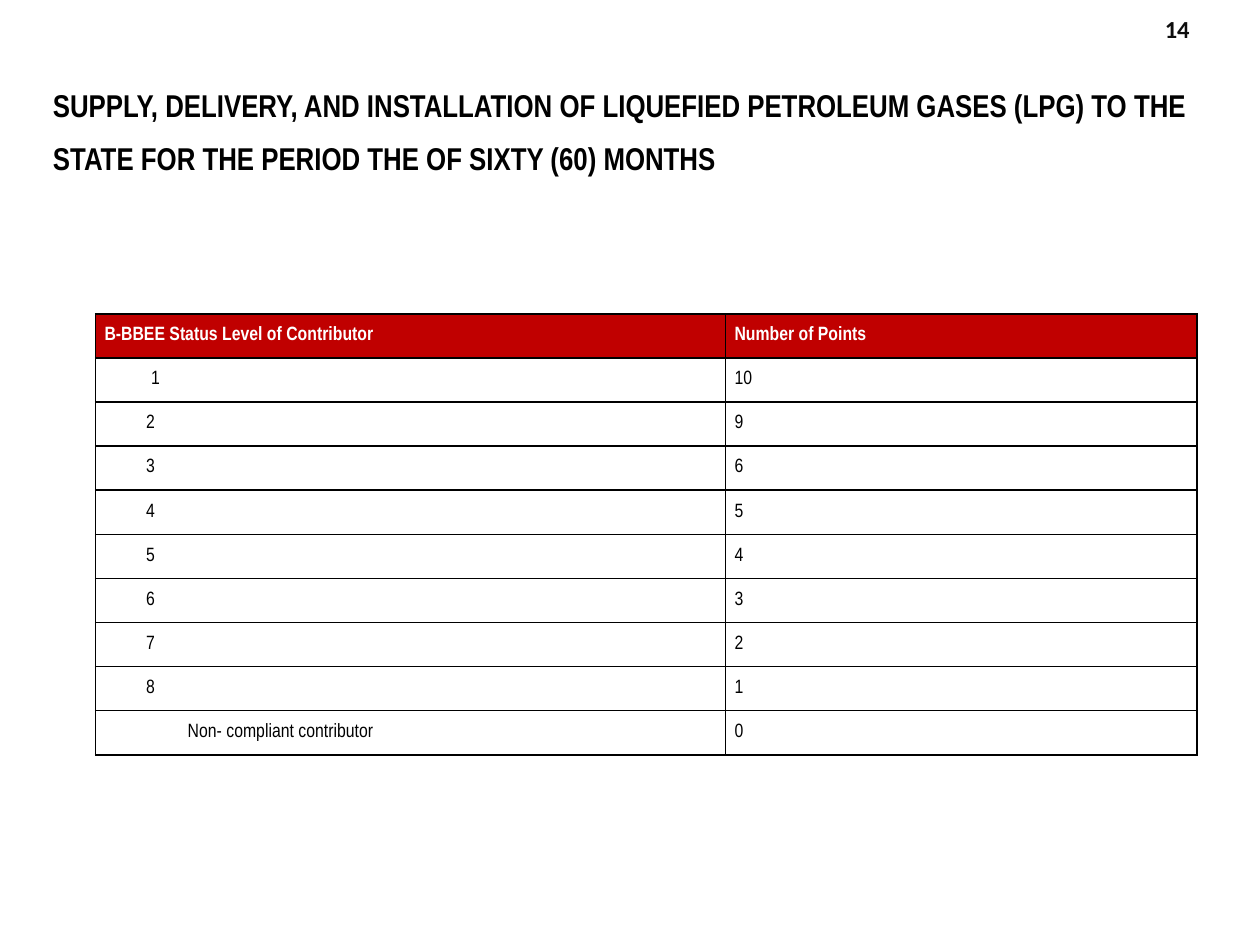
from dataclasses import dataclass

from lxml import etree
from pptx import Presentation
from pptx.dml.color import RGBColor
from pptx.enum.text import MSO_ANCHOR, PP_ALIGN
from pptx.oxml.ns import qn
from pptx.util import Inches, Pt


@dataclass(frozen=True)
class Theme:
    black: RGBColor = RGBColor(0x00, 0x00, 0x00)
    white: RGBColor = RGBColor(0xFF, 0xFF, 0xFF)
    number_ink: RGBColor = RGBColor(0x0D, 0x0D, 0x0D)
    header_fill: RGBColor = RGBColor(0xC0, 0x00, 0x00)
    text_face: str = "Arial Narrow"
    number_face: str = "Calibri"
    title_size: int = 18
    number_size: int = 14
    table_size: int = 11


THEME = Theme()
TITLE = ("SUPPLY, DELIVERY, AND INSTALLATION OF LIQUEFIED PETROLEUM GASES (LPG) "
         "TO THE STATE FOR THE PERIOD THE OF SIXTY (60) MONTHS")
HEADINGS = ("B-BBEE Status Level of Contributor", "Number of Points")
LEVELS = [str(level) for level in range(1, 9)] + ["Non- compliant contributor"]
POINTS = (10, 9, 6, 5, 4, 3, 2, 1, 0)

# Table grid, in inches
COLUMN_WIDTHS = (5, 3.74)
ROW_HEIGHT = 0.35
HANGING = -0.01
LEVEL_INDENTS = [0.38] + [0.34] * 7 + [0.67]


def style_font(paragraph, face, size, color, bold):
    font = paragraph.font
    font.name, font.size, font.bold = face, Pt(size), bold
    font.color.rgb = color


def place(shape, left, top, width, height):
    shape.left, shape.top = Inches(left), Inches(top)
    shape.width, shape.height = Inches(width), Inches(height)


def add_title(slide):
    title = slide.shapes.title
    place(title, 0.32, 0.68, 9.34, 1.03)
    frame = title.text_frame
    frame.text = TITLE
    frame.word_wrap = True
    frame.vertical_anchor = MSO_ANCHOR.MIDDLE
    frame.margin_bottom = Inches(0.47)  # lifts the text by half a line
    heading = frame.paragraphs[0]
    heading.alignment = PP_ALIGN.LEFT
    heading.line_spacing = Pt(30)
    heading.space_before = Pt(0)
    style_font(heading, THEME.text_face, THEME.title_size, THEME.black, True)


def add_page_number(slide, number):
    box = slide.shapes.add_textbox(Inches(9.1), 0, Inches(0.44), Inches(0.45))
    frame = box.text_frame
    frame.word_wrap = True
    frame.vertical_anchor = MSO_ANCHOR.MIDDLE
    frame.text = number
    paragraph = frame.paragraphs[0]
    paragraph.alignment = PP_ALIGN.RIGHT
    style_font(paragraph, THEME.number_face, THEME.number_size, THEME.number_ink, True)


def add_borders(cell):
    properties = cell._tc.get_or_add_tcPr()
    for position, side in enumerate(("a:lnL", "a:lnR", "a:lnT", "a:lnB")):
        line = etree.Element(qn(side), w=str(Pt(1)))
        fill = etree.SubElement(line, qn("a:solidFill"))
        etree.SubElement(fill, qn("a:srgbClr"), val=str(THEME.black))
        properties.insert(position, line)  # borders come before the fill


def fill_cell(cell, text, indent, is_header):
    cell.margin_left, cell.margin_right = Inches(0.07), Inches(0.08)
    cell.margin_top, cell.margin_bottom = Inches(0.03), 0
    if is_header:
        cell.fill.solid()
        cell.fill.fore_color.rgb = THEME.header_fill
    else:
        cell.fill.background()
    add_borders(cell)

    cell.text = text
    paragraph = cell.text_frame.paragraphs[0]
    paragraph.alignment = PP_ALIGN.JUSTIFY
    paragraph.line_spacing = 1.5
    paragraph.space_after = Pt(13)
    properties = paragraph._p.get_or_add_pPr()
    properties.set("marL", str(Inches(indent)))
    properties.set("indent", str(Inches(HANGING)))
    color = THEME.white if is_header else THEME.black
    style_font(paragraph, THEME.text_face, THEME.table_size, color, is_header)


def add_points_table(slide):
    rows = [HEADINGS] + [(level, str(points)) for level, points in zip(LEVELS, POINTS)]
    indents = [(0.01, 0)] + [(indent, 0.01) for indent in LEVEL_INDENTS]
    frame = slide.shapes.add_table(
        len(rows), len(HEADINGS), Inches(0.76), Inches(2.49),
        Inches(sum(COLUMN_WIDTHS)), Inches(ROW_HEIGHT * len(rows)))
    table = frame.table
    table.horz_banding = False
    for column, width in zip(table.columns, COLUMN_WIDTHS):
        column.width = Inches(width)
    for r, (texts, row_indents) in enumerate(zip(rows, indents)):
        table.rows[r].height = Inches(ROW_HEIGHT)
        for c, (text, indent) in enumerate(zip(texts, row_indents)):
            fill_cell(table.cell(r, c), text, indent, is_header=r == 0)


def main():
    presentation = Presentation()
    presentation.slide_width, presentation.slide_height = Inches(10), Inches(7.5)
    title_only = presentation.slide_layouts[5]
    slide = presentation.slides.add_slide(title_only)
    add_page_number(slide, "14")
    add_title(slide)
    add_points_table(slide)
    presentation.save("out.pptx")


if __name__ == "__main__":
    main()
